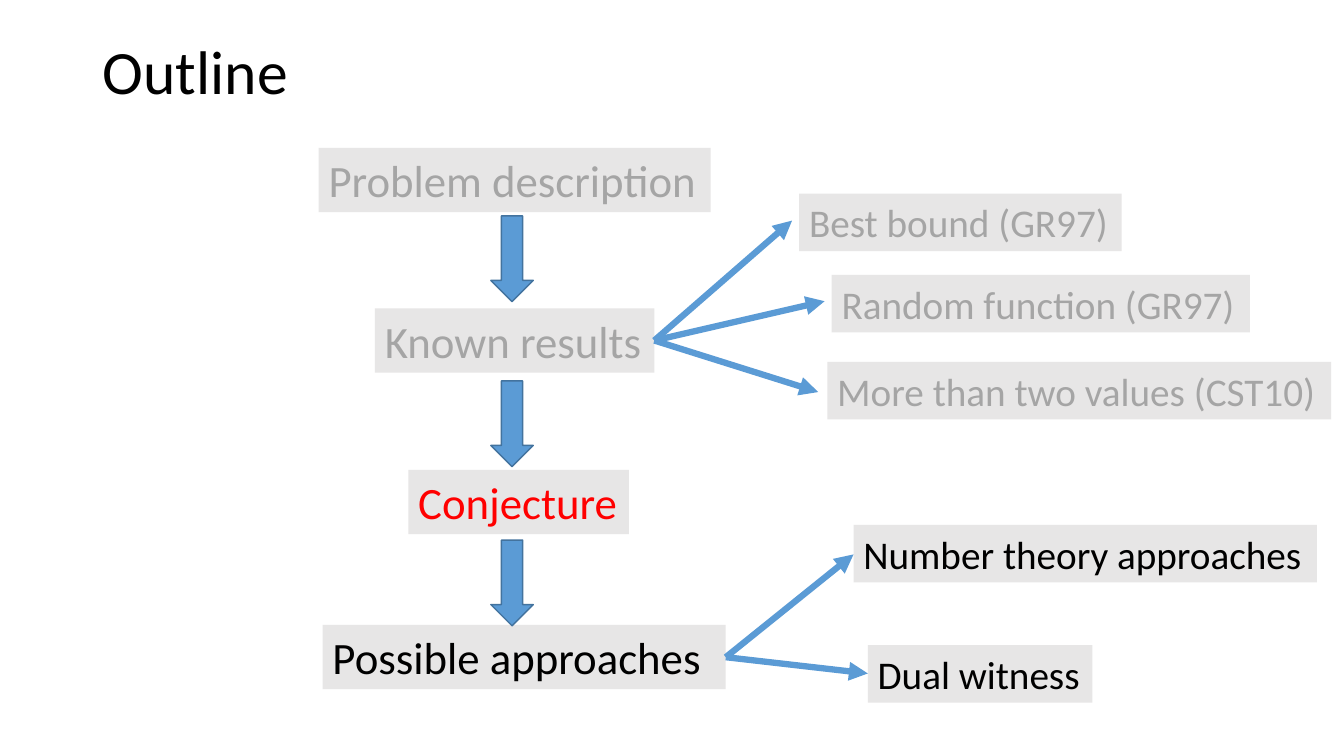
from lxml.etree import SubElement
from pptx import Presentation
from pptx.dml.color import RGBColor
from pptx.enum.shapes import MSO_CONNECTOR, MSO_SHAPE
from pptx.enum.text import MSO_ANCHOR, MSO_AUTO_SIZE, PP_ALIGN
from pptx.oxml.ns import qn
from pptx.util import Cm, Pt

GREY, BLUE, EDGE = "E7E6E6", "5B9BD5", "43739E"
DIM, BLACK, RED = "A5A5A5", "000000", "FF0000"

# Main steps: text, colour, left, top, width
STEPS = [
    ("Problem description", DIM, 8.03, 3.73, 9.88),
    ("Known results", DIM, 9.45, 7.77, 7.04),
    ("Conjecture", RED, 10.29, 11.84, 5.56),
    ("Possible approaches", BLACK, 8.13, 15.75, 10.16),
]
# Branches by step: text, colour, left, top, width, arrow gap, arrow drop
BRANCHES = {
    "Known results": [
        ("Best bound (GR97)", DIM, 20.14, 4.88, 8.13, 0.18, 0.68),
        ("Random function (GR97)", DIM, 20.96, 6.93, 10.54, 0.18, 0.66),
        ("More than two values (CST10)", DIM, 20.85, 9.12, 12.7, 0.23, 0.76),
    ],
    "Possible approaches": [
        ("Number theory approaches", BLACK, 21.51, 13.23, 11.68, 0, 0.74),
        ("Dual witness", BLACK, 21.87, 16.26, 5.66, 0, 0.71),
    ],
}
STEP_H, SIDE_H = 1.62, 1.45


def tint(code):
    return RGBColor.from_string(code)


def apply(item, style):
    for name, value in style.items():
        setattr(item, name, value)


def write(shape, text, size, color, frame, para):
    apply(shape.text_frame, {"word_wrap": True, **frame})
    line = shape.text_frame.paragraphs[0]
    apply(line, {"alignment": PP_ALIGN.LEFT, **para})
    run = line.add_run()
    run.text = text
    apply(run.font, {"name": "Calibri", "size": Pt(size)})
    run.font.color.rgb = tint(color)


def block(slide, kind, box, fill):
    shape = slide.shapes.add_shape(kind, *map(Cm, box))
    shape.shadow.inherit = False
    shape.fill.solid()
    shape.fill.fore_color.rgb = tint(fill)
    shape.line.fill.background()
    return shape


def label(slide, box, text, size, color):
    shape = block(slide, MSO_SHAPE.RECTANGLE, box, GREY)
    frame = {"vertical_anchor": MSO_ANCHOR.TOP, "margin_right": 0,
             "auto_size": MSO_AUTO_SIZE.SHAPE_TO_FIT_TEXT}
    write(shape, text, size, color, frame, {})


def down(slide, box):
    shape = block(slide, MSO_SHAPE.DOWN_ARROW, box, BLUE)
    shape.line.color.rgb = tint(EDGE)
    shape.line.width = Pt(1)


def arrow(slide, start, end):
    link = slide.shapes.add_connector(
        MSO_CONNECTOR.STRAIGHT, *map(Cm, start + end))
    link.line.color.rgb = tint(BLUE)
    link.line.width = Pt(4.5)
    SubElement(link.line._get_or_add_ln(), qn("a:tailEnd"), type="triangle")
    SubElement(link._element.spPr, qn("a:effectLst"))


def title(slide, box):
    shape = slide.shapes.add_textbox(*map(Cm, box))
    write(shape, "Outline", 44, BLACK,
          {"vertical_anchor": MSO_ANCHOR.MIDDLE}, {"line_spacing": 0.9})


def fan(slide, start, sides):
    for text, color, left, top, width, gap, drop in sides:
        label(slide, (left, top, width, SIDE_H), text, 28, color)
        arrow(slide, start, (left - gap, top + drop))


def flow(slide):
    # Steps with their branches
    for text, color, left, top, width in STEPS:
        label(slide, (left, top, width, STEP_H), text, 32, color)
        start = (left + width, top + STEP_H / 2)
        fan(slide, start, BRANCHES.get(text, []))
    # Arrows between the steps
    for top in (5.44, 9.6, 13.61):
        down(slide, (12.37, top, 1.07, 2.16))


def main():
    deck = Presentation()
    apply(deck, {"slide_width": Cm(33.87), "slide_height": Cm(19.05)})
    slide = deck.slides.add_slide(deck.slide_layouts[6])
    title(slide, (2.34, 0.05, 29.21, 3.68))
    flow(slide)
    deck.save("out.pptx")


if __name__ == "__main__":
    main()
